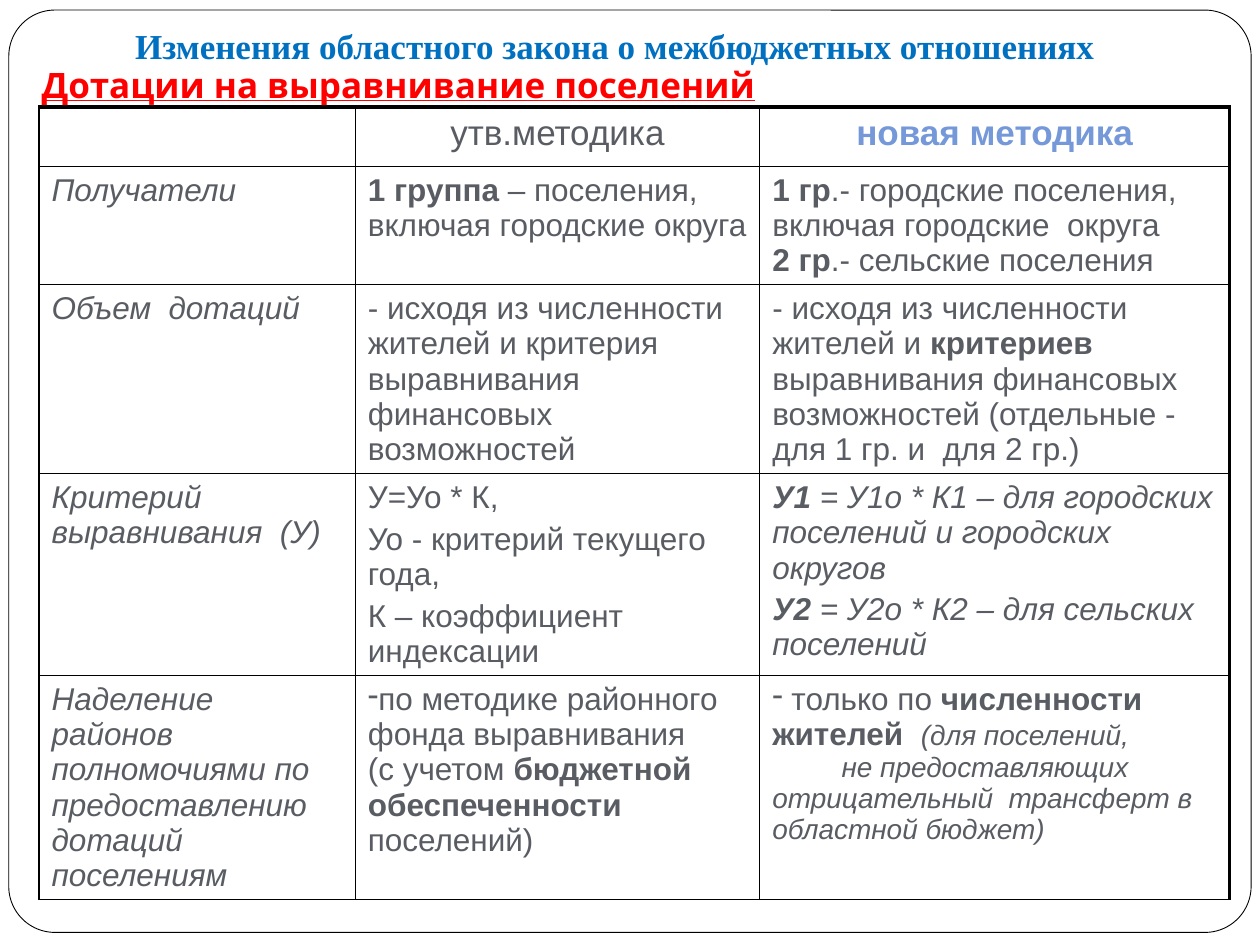
from lxml import etree
from pptx import Presentation
from pptx.dml.color import RGBColor
from pptx.enum.shapes import MSO_SHAPE
from pptx.enum.text import MSO_ANCHOR, MSO_AUTO_SIZE, PP_ALIGN
from pptx.oxml.ns import qn
from pptx.util import Inches, Pt

ROUNDED = MSO_SHAPE.ROUNDED_RECTANGLE
LEFT, CENTER = PP_ALIGN.LEFT, PP_ALIGN.CENTER
BOTTOM = MSO_ANCHOR.BOTTOM
NO_AUTOFIT = MSO_AUTO_SIZE.NONE

COLORS = {"white": "FFFFFF", "black": "000000", "red": "FF0000",
          "blue": "0070C0", "gray": "595D63", "light_blue": "7598D9"}

HEADING = "Изменения областного закона о межбюджетных отношениях"
TITLE = "Дотации на выравнивание поселений"

BOLD, ITALIC = {"bold": True}, {"italic": True}
BOLD_ITALIC = {"bold": True, "italic": True}
SMALL = {"italic": True, "size": 16}
HEADER = {"size": 20}
HEADER_NEW = {"size": 20, "bold": True, "color": "light_blue"}

# Rows hold cells, cells hold paragraphs, paragraphs hold (text, format) runs.
ROWS = [
    [[],
     [[("утв.методика", HEADER)]],
     [[("новая методика", HEADER_NEW)]]],
    [[[("Получатели", ITALIC)]],
     [[("1 группа ", BOLD), ("– поселения, включая городские округа", {})]],
     [[("1 гр", BOLD), (".- городские поселения, включая городские  округа\n", {}),
       ("2 гр", BOLD), (".- сельские поселения", {})]]],
    [[[("Объем  дотаций", ITALIC)]],
     [[("- исходя из численности жителей и критерия выравнивания "
        "финансовых возможностей", {})]],
     [[("- исходя из численности жителей и ", {}), ("критериев ", BOLD),
       ("выравнивания финансовых возможностей (отдельные - "
        "для 1 гр. и  для 2 гр.)", {})]]],
    [[[("Критерий выравнивания  (У)", ITALIC)]],
     [[("У=Уо * К,", {})],
      [("Уо - критерий текущего года,", {})],
      [("К – коэффициент индексации", {})]],
     [[("У1", BOLD_ITALIC),
       (" = У1о * К1 – для городских поселений и городских округов", ITALIC)],
      [("У2", BOLD_ITALIC), (" = У2о * К2 – для сельских поселений", ITALIC)]]],
    [[[("Наделение районов полномочиями по предоставлению дотаций поселениям",
        ITALIC)]],
     [[("по методике районного фонда выравнивания\n(с учетом ", {}),
       ("бюджетной обеспеченности ", BOLD), ("поселений)", {})]],
     [[(" только по ", {}), ("численности жителей  ", BOLD),
       ("(для поселений,\n\tне предоставляющих отрицательный  трансферт "
        "в областной бюджет)", SMALL)]]],
]
COLUMN_WIDTHS = [2.51, 3.21, 3.73]
ROW_HEIGHTS = [0.47, 0.93, 1.5, 1.6, 1.51]
DASHED_CELLS = {(4, 1), (4, 2)}
THIN, THICK = 1, 2.25


def rgb(name):
    return RGBColor.from_string(COLORS[name])


def add_text(paragraph, text, font="Arial", size=18, color="gray",
             bold=False, italic=False, underline=False):
    """Add formatted text; each newline becomes a line break."""
    for index, line in enumerate(text.split("\n")):
        if index:
            paragraph.add_line_break()
        run = paragraph.add_run()
        run.text = line
        run.font.name, run.font.size = font, Pt(size)
        run.font.bold, run.font.italic = bold, italic
        run.font.underline = underline
        run.font.color.rgb = rgb(color)


def fill_heading(shape, text, alignment, **text_format):
    frame = shape.text_frame
    frame.word_wrap = True
    frame.auto_size = NO_AUTOFIT
    frame.vertical_anchor = BOTTOM
    frame.margin_left = frame.margin_right = frame.margin_bottom = Inches(0.1)
    frame.margin_top = Inches(0.05)
    frame.paragraphs[0].alignment = alignment
    add_text(frame.paragraphs[0], text, size=20, bold=True, **text_format)


def add_dash_and_tab(paragraph):
    """Give the paragraph a dash bullet without hanging indent, and a tab stop."""
    properties = paragraph._p.get_or_add_pPr()
    properties.set("marL", "0")
    properties.set("indent", "0")
    etree.SubElement(properties, qn("a:buChar"), char="-")
    stops = etree.SubElement(properties, qn("a:tabLst"))
    etree.SubElement(stops, qn("a:tab"), pos=str(Inches(0.55)), algn="l")


def set_borders(cell, widths):
    properties = cell._tc.get_or_add_tcPr()
    for index, (side, width) in enumerate(widths.items()):
        line = etree.Element(qn("a:ln" + side), w=str(Pt(width)))
        fill = etree.SubElement(line, qn("a:solidFill"))
        etree.SubElement(fill, qn("a:srgbClr"), val=COLORS["black"])
        properties.insert(index, line)


def fill_cell(cell, paragraphs, row, column):
    cell.fill.background()
    set_borders(cell, {
        "L": THIN,
        "R": THICK if column == len(COLUMN_WIDTHS) - 1 else THIN,
        "T": THICK if row == 0 else THIN,
        "B": THIN})
    frame = cell.text_frame
    for index, runs in enumerate(paragraphs):
        paragraph = frame.add_paragraph() if index else frame.paragraphs[0]
        paragraph.alignment = LEFT if row else CENTER
        paragraph.space_before = Pt(3.6 if row else 4)
        if (row, column) in DASHED_CELLS:
            add_dash_and_tab(paragraph)
        for text, text_format in runs:
            add_text(paragraph, text, **text_format)


def add_frame(slide):
    frame = slide.shapes.add_shape(ROUNDED, Inches(0.07), Inches(0.08),
                                   Inches(9.86), Inches(7.32))
    frame.adjustments[0] = 0.05
    frame.shadow.inherit = False
    frame.fill.solid()
    frame.fill.fore_color.rgb = rgb("white")
    frame.line.color.rgb = rgb("black")
    frame.line.width = Pt(0.5)
    frame.element.getparent().insert(2, frame.element)  # behind the title


def add_comparison_table(slide):
    table = slide.shapes.add_table(
        len(ROWS), len(COLUMN_WIDTHS), Inches(0.31), Inches(0.85),
        Inches(sum(COLUMN_WIDTHS)), Inches(sum(ROW_HEIGHTS))).table
    table.first_row = table.horz_banding = False
    for column, width in zip(table.columns, COLUMN_WIDTHS):
        column.width = Inches(width)
    for row, height in zip(table.rows, ROW_HEIGHTS):
        row.height = Inches(height)
    for row, cells in enumerate(ROWS):
        for column, paragraphs in enumerate(cells):
            fill_cell(table.cell(row, column), paragraphs, row, column)


def main():
    presentation = Presentation()
    presentation.slide_width, presentation.slide_height = Inches(10), Inches(7.5)
    slide = presentation.slides.add_slide(presentation.slide_layouts[5])
    add_frame(slide)

    title = slide.shapes.title
    title.left, title.top = Inches(0.23), Inches(0.55)
    title.width, title.height = Inches(9.77), Inches(0.39)
    fill_heading(title, TITLE, LEFT, font="Karla", color="red", underline=True)

    add_comparison_table(slide)

    heading = slide.shapes.add_textbox(Inches(0.31), 0, Inches(9.14), Inches(0.63))
    fill_heading(heading, HEADING, CENTER, font="Times New Roman", color="blue")
    presentation.save("out.pptx")


if __name__ == "__main__":
    main()
